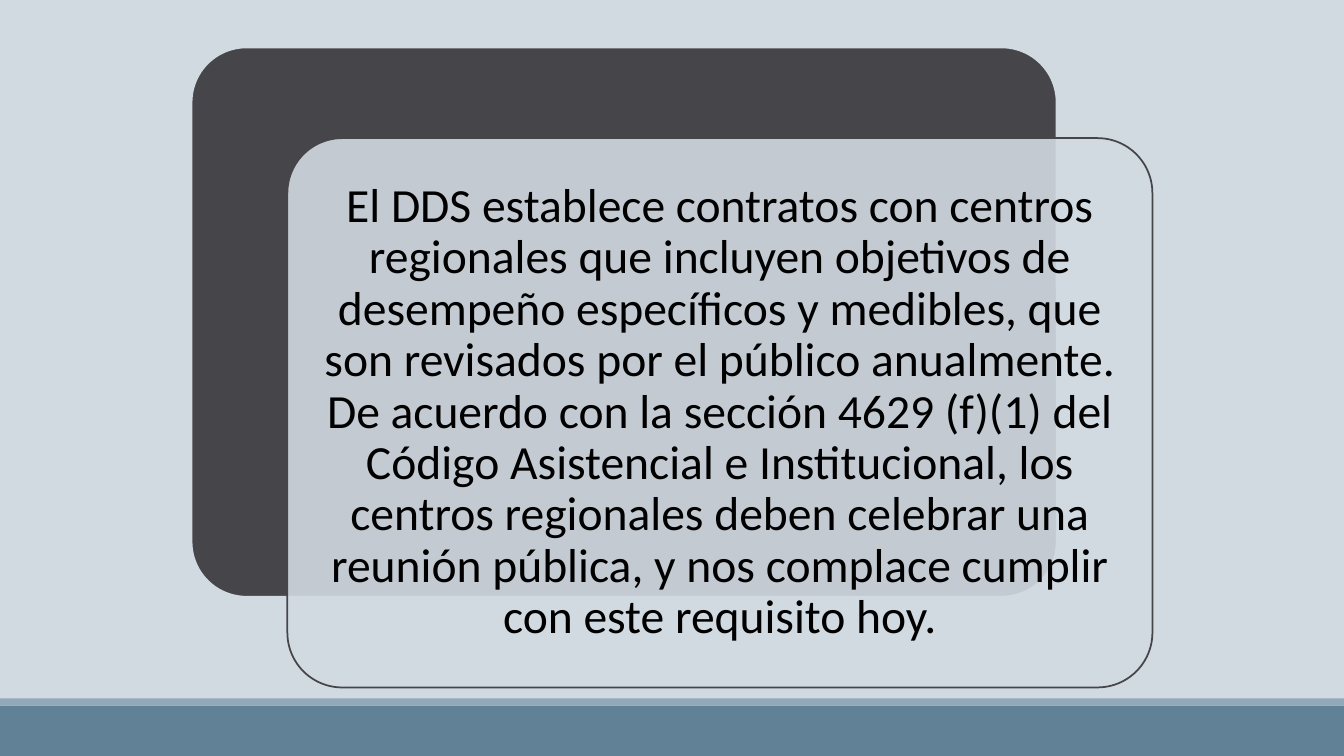
from lxml.etree import SubElement
from pptx import Presentation
from pptx.dml.color import RGBColor
from pptx.enum.shapes import MSO_SHAPE
from pptx.enum.text import MSO_ANCHOR, PP_ALIGN
from pptx.oxml.ns import qn
from pptx.util import Inches, Pt

WIDTH, HEIGHT = 13.33, 7.5
PALE, DARK, BLUE, LIGHT_BLUE = "D1D9E1", "46464A", "618197", "92A9B9"
CARD_WIDTH, CARD_HEIGHT = 8.58, 5.45
CARD_LEFT, CARD_TOP = 1.9, 0.47
CARD_SHIFT_X, CARD_SHIFT_Y = 0.95, 0.9
TEXT_INSET = 0.16
STATEMENT = (
    "El DDS establece contratos con centros regionales que incluyen objetivos "
    "de desempeño específicos y medibles, que son revisados por el público "
    "anualmente. De acuerdo con la sección 4629 (f)(1) del Código Asistencial "
    "e Institucional, los centros regionales deben celebrar una reunión "
    "pública, y nos complace cumplir con este requisito hoy."
)


def paint(color_format, color):
    color_format.rgb = RGBColor.from_string(color)


def add_panel(page, preset, left, top, width, height, fill, line=None):
    panel = page.shapes.add_shape(
        preset, Inches(left), Inches(top), Inches(width), Inches(height))
    panel.shadow.inherit = False
    panel.fill.solid()
    paint(panel.fill.fore_color, fill)
    if line:
        paint(panel.line.color, line)
        panel.line.width = Pt(1.25)
    else:
        panel.line.fill.background()
    return panel


def add_card(page, step, fill, line):
    """Each step moves the card right and down by the same shift."""
    card = add_panel(page, MSO_SHAPE.ROUNDED_RECTANGLE,
                     CARD_LEFT + step * CARD_SHIFT_X,
                     CARD_TOP + step * CARD_SHIFT_Y,
                     CARD_WIDTH, CARD_HEIGHT, fill, line)
    card.adjustments[0] = 0.1
    return card


def set_opacity(shape, percent):
    color = shape.fill._xPr.find(qn("a:solidFill"))[0]
    SubElement(color, qn("a:alpha")).set("val", str(percent * 1000))


def add_statement(page, card, text):
    inset = Inches(TEXT_INSET)
    box = page.shapes.add_textbox(card.left + inset, card.top + inset,
                                  card.width - 2 * inset,
                                  card.height - 2 * inset)
    frame = box.text_frame
    frame.word_wrap = True
    frame.vertical_anchor = MSO_ANCHOR.MIDDLE
    frame.margin_left = frame.margin_right = Inches(0.14)
    frame.margin_top = frame.margin_bottom = Inches(0.14)
    frame.text = text
    para = frame.paragraphs[0]
    para.alignment = PP_ALIGN.CENTER
    para.line_spacing = 0.9
    span = para.runs[0]
    span.font.name = "Calibri"
    span.font.size = Pt(34)
    paint(span.font.color, "000000")


def main():
    deck = Presentation()
    deck.slide_width, deck.slide_height = Inches(WIDTH), Inches(HEIGHT)
    page = deck.slides.add_slide(deck.slide_layouts[6])
    page.background.fill.solid()
    paint(page.background.fill.fore_color, PALE)

    # Footer bands
    for top, height, color in ((7, 0.5, BLUE), (6.93, 0.07, LIGHT_BLUE)):
        add_panel(page, MSO_SHAPE.RECTANGLE, 0, top, WIDTH, height, color)

    # Overlapping cards with the statement on the front one
    add_card(page, 0, DARK, PALE)
    front = add_card(page, 1, PALE, DARK)
    set_opacity(front, 90)
    add_statement(page, front, STATEMENT)

    deck.save("out.pptx")


if __name__ == "__main__":
    main()
